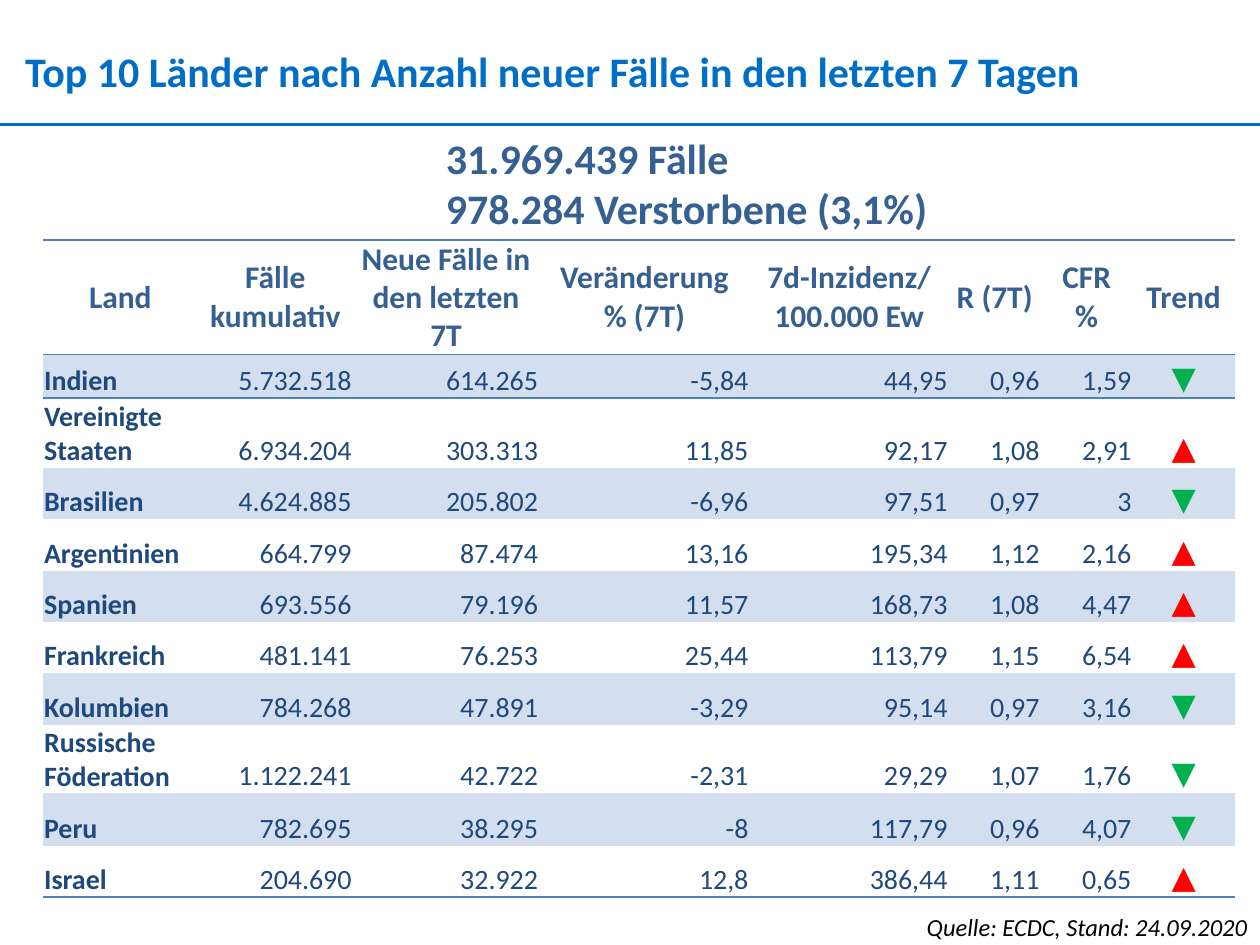
from dataclasses import dataclass

from lxml.etree import SubElement
from pptx import Presentation
from pptx.dml.color import RGBColor as Rgb
from pptx.enum.shapes import MSO_CONNECTOR as Connector
from pptx.enum.text import MSO_ANCHOR as Anchor, MSO_AUTO_SIZE as AutoSize, PP_ALIGN as Align
from pptx.oxml.ns import qn
from pptx.util import Inches, Pt

COLORS = {
    "title": "006EC7",
    "heading": "366092",
    "body": "1F497D",
    "band": "D3DFEE",
    "border": "4F81BD",
    "rise": "FF0000",
    "fall": "00B050",
    "source": "000000",
}
FONT = "Calibri"
PLAIN_TABLE_STYLE = "{2D5ABB26-0587-4C30-8999-92F81FD0307C}"
SLIDE_WIDTH, SLIDE_HEIGHT = Inches(10), Inches(7.5)

COLUMN_SHARES = [1.23, 1.23, 1.48, 1.67, 1.58, 0.73, 0.73, 0.81]
ROW_SHARES = [0.87, 0.33, 0.53] + [0.39] * 5 + [0.38, 0.4, 0.39]
HEADINGS = [
    "Land", "Fälle kumulativ", "Neue Fälle in den letzten 7T", "Veränderung % (7T)",
    "7d-Inzidenz/ 100.000 Ew", "R (7T)", "CFR %", "Trend",
]
COUNTRIES = [
    ["Indien", "5.732.518", "614.265", "-5,84", "44,95", "0,96", "1,59"],
    ["Vereinigte Staaten", "6.934.204", "303.313", "11,85", "92,17", "1,08", "2,91"],
    ["Brasilien", "4.624.885", "205.802", "-6,96", "97,51", "0,97", "3"],
    ["Argentinien", "664.799", "87.474", "13,16", "195,34", "1,12", "2,16"],
    ["Spanien", "693.556", "79.196", "11,57", "168,73", "1,08", "4,47"],
    ["Frankreich", "481.141", "76.253", "25,44", "113,79", "1,15", "6,54"],
    ["Kolumbien", "784.268", "47.891", "-3,29", "95,14", "0,97", "3,16"],
    ["Russische Föderation", "1.122.241", "42.722", "-2,31", "29,29", "1,07", "1,76"],
    ["Peru", "782.695", "38.295", "-8", "117,79", "0,96", "4,07"],
    ["Israel", "204.690", "32.922", "12,8", "386,44", "1,11", "0,65"],
]
CHANGE_COLUMN = HEADINGS.index("Veränderung % (7T)")


@dataclass
class Box:
    left: float
    top: float
    width: float
    height: float

    def lengths(self):
        return (
            int(SLIDE_WIDTH * self.left / 100), int(SLIDE_HEIGHT * self.top / 100),
            int(SLIDE_WIDTH * self.width / 100), int(SLIDE_HEIGHT * self.height / 100),
        )


def style_paragraph(para, size, color, bold=False, italic=False, align=Align.LEFT):
    para.alignment = align
    font = para.font
    font.name, font.size, font.bold, font.italic = FONT, Pt(size), bold, italic
    font.color.rgb = Rgb.from_string(COLORS[color])


def add_text(page, box, lines, size, color, inset=True, wrap=True, **style):
    frame = page.shapes.add_textbox(*box.lengths()).text_frame
    frame.word_wrap = wrap
    frame.auto_size = AutoSize.SHAPE_TO_FIT_TEXT
    if not inset:
        frame.margin_left = frame.margin_right = frame.margin_top = frame.margin_bottom = 0
    frame.text = "\n".join(lines)
    for para in frame.paragraphs:
        style_paragraph(para, size, color, **style)


def add_rule(page, box):
    left, top, width, height = box.lengths()
    rule = page.shapes.add_connector(Connector.STRAIGHT, left, top, left + width, top + height)
    rule.line.color.rgb = Rgb.from_string(COLORS["title"])
    rule.line.width = Pt(1.5)
    SubElement(rule.element.spPr, qn("a:effectLst"))


def add_border(cell, side):
    line = SubElement(cell._tc.get_or_add_tcPr(), qn(f"a:{side}"), w=str(Pt(1)))
    fill = SubElement(line, qn("a:solidFill"))
    SubElement(fill, qn("a:srgbClr"), val=COLORS["border"])


def fill_cell(cell, text, margins, anchor, borders, band, **style):
    cell.margin_left = cell.margin_right = Inches(margins[0])
    cell.margin_top, cell.margin_bottom = Inches(margins[1]), 0
    cell.vertical_anchor = anchor
    cell.text = text
    style_paragraph(cell.text_frame.paragraphs[0], **style)
    for side in borders:
        add_border(cell, side)
    if band:
        cell.fill.solid()
        cell.fill.fore_color.rgb = Rgb.from_string(COLORS["band"])
    else:
        cell.fill.background()


def body_style(column, falling):
    if column == 0:
        return {"size": 16, "color": "body", "bold": True}
    if column == len(HEADINGS) - 1:
        return {"size": 18, "color": "fall" if falling else "rise", "align": Align.CENTER}
    return {"size": 16, "color": "body", "align": Align.RIGHT}


def add_country_table(page, box):
    left, top, width, height = box.lengths()
    row_count = len(COUNTRIES) + 1
    holder = page.shapes.add_table(row_count, len(HEADINGS), left, top, width, height)
    table = holder.table
    table.first_row = table.horz_banding = False
    next(holder.element.iter(qn("a:tableStyleId"))).text = PLAIN_TABLE_STYLE
    for column, share in zip(table.columns, COLUMN_SHARES):
        column.width = int(width * share / sum(COLUMN_SHARES))
    for row, share in zip(table.rows, ROW_SHARES):
        row.height = int(height * share / sum(ROW_SHARES))

    for column, heading in enumerate(HEADINGS):
        fill_cell(table.cell(0, column), heading, (0.06, 0), Anchor.MIDDLE, ["lnT", "lnB"], False,
                  size=18, color="heading", bold=True, align=Align.CENTER)
    borders = {1: ["lnT"], row_count - 1: ["lnB"]}
    for row, values in enumerate(COUNTRIES, start=1):
        falling = values[CHANGE_COLUMN].startswith("-")
        for column, text in enumerate(values + ["▼" if falling else "▲"]):
            fill_cell(table.cell(row, column), text, (0.01, 0.01), Anchor.BOTTOM,
                      borders.get(row, []), row % 2 == 1, **body_style(column, falling))


def add_header(page, title_box, rule_box):
    add_text(page, title_box, ["Top 10 Länder nach Anzahl neuer Fälle in den letzten 7 Tagen"],
             24, "title", inset=False, bold=True)
    add_rule(page, rule_box)


def add_totals(page, box):
    add_text(page, box, ["31.969.439 Fälle", "978.284 Verstorbene (3,1%)"],
             24, "heading", wrap=False, bold=True)


def add_source(page, box):
    add_text(page, box, ["Quelle: ECDC, Stand: 24.09.2020"],
             14, "source", italic=True, align=Align.RIGHT)


def main():
    deck = Presentation()
    deck.slide_width, deck.slide_height = SLIDE_WIDTH, SLIDE_HEIGHT
    page = deck.slides.add_slide(deck.slide_layouts[6])
    add_header(page, Box(2, 4.8, 96.3, 5.33), Box(0, 13.2, 100, 0))
    add_totals(page, Box(34.4, 13.33, 40.6, 12.13))
    add_source(page, Box(64.6, 95.87, 35.4, 4.53))
    add_country_table(page, Box(3.4, 25.4, 94.6, 67.6))
    deck.save("out.pptx")


if __name__ == "__main__":
    main()
